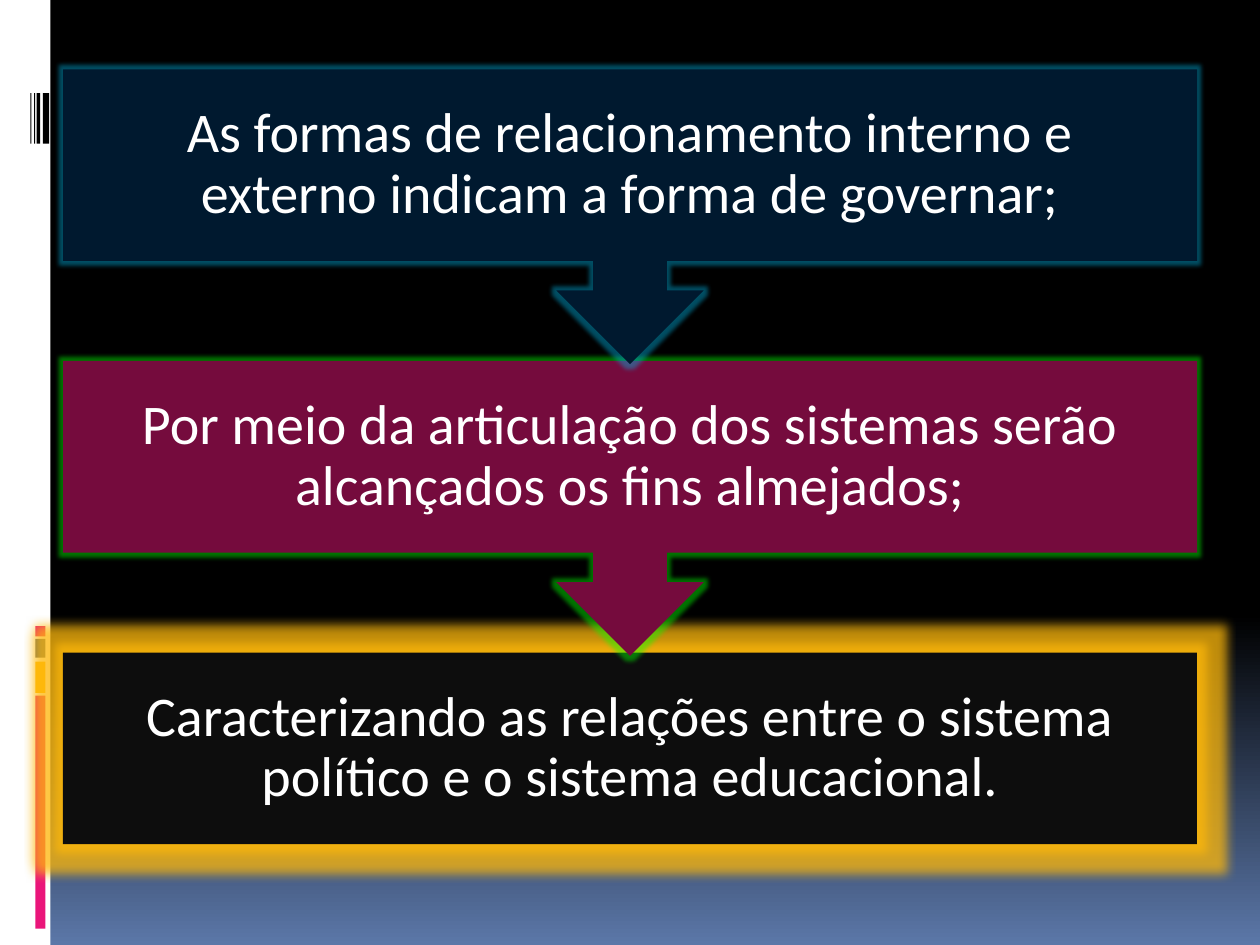
import pptx
import pptx.util
import pptx.dml.color
import pptx.enum.shapes
import pptx.enum.text
import pptx.oxml
import pptx.oxml.ns

Inches = pptx.util.Inches
RGBColor = pptx.dml.color.RGBColor
MSO_SHAPE = pptx.enum.shapes.MSO_SHAPE

BLACK = RGBColor(0x00, 0x00, 0x00)
WHITE = RGBColor(0xFF, 0xFF, 0xFF)
PINK = RGBColor(0xEA, 0x15, 0x7A)
AMBER = RGBColor(0xFE, 0xB8, 0x0A)
SLATE = RGBColor(0x4E, 0x5B, 0x6F)
SKY = RGBColor(0x5B, 0x77, 0xA8)
NAVY = RGBColor(0x00, 0x19, 0x2F)
WINE = RGBColor(0x75, 0x0B, 0x3D)
CHARCOAL = RGBColor(0x0D, 0x0D, 0x0D)
CYAN = RGBColor(0x00, 0xAD, 0xDC)
GREEN = RGBColor(0x00, 0xFF, 0x00)

presentation = pptx.Presentation()
presentation.slide_width = Inches(10)
presentation.slide_height = Inches(7.5)
slide = presentation.slides.add_slide(presentation.slide_layouts[6])

background = slide.background.fill
background.gradient()
background.gradient_angle = 270
for stop, position, color in zip(background.gradient_stops, (0.65, 1), (BLACK, SKY)):
    stop.position = position
    stop.color.rgb = color


def add_block(kind, left, top, width, height, color):
    shape = slide.shapes.add_shape(
        kind, Inches(left), Inches(top), Inches(width), Inches(height))
    shape.shadow.inherit = False
    shape.fill.solid()
    shape.fill.fore_color.rgb = color
    shape.line.fill.background()
    return shape


def add_text(text, *, left, top, width, height, size, color, font="Calibri", inset=0.25):
    frame = slide.shapes.add_textbox(
        Inches(left), Inches(top), Inches(width), Inches(height)).text_frame
    frame.word_wrap = True
    frame.vertical_anchor = pptx.enum.text.MSO_ANCHOR.MIDDLE
    frame.margin_left = frame.margin_right = Inches(inset)
    frame.margin_top = frame.margin_bottom = Inches(inset)
    paragraph = frame.paragraphs[0]
    paragraph.text = text
    paragraph.alignment = pptx.enum.text.PP_ALIGN.CENTER
    paragraph.line_spacing = 0.9
    paragraph.font.name = font
    paragraph.font.size = pptx.util.Pt(size)
    paragraph.font.color.rgb = color


# Side band with its coloured segments and barcode
add_block(MSO_SHAPE.RECTANGLE, 0, 0, 0.4, 7.5, WHITE)
for top, height, color in [
    (5.52, 1.85, PINK), (5.25, 0.25, AMBER), (5.07, 0.15, SLATE), (4.97, 0.08, PINK),
]:
    add_block(MSO_SHAPE.RECTANGLE, 0.28, top, 0.08, height, color)
for left, width in [(0.34, 0.05), (0.29, 0.03), (0.27, 0.01), (0.24, 0.01)]:
    add_block(MSO_SHAPE.RECTANGLE, left, 0.74, width, 0.4, BLACK)

# Steps, stacked from the bottom so that each arrow overlaps the next box
LEFT, WIDTH, BOX_HEIGHT, CALLOUT_HEIGHT = 0.5, 9, 1.52, 2.34
FIRST_TOP, STEP = 0.55, 2.315
steps = [
    ("As formas de relacionamento interno e externo indicam a forma de governar;",
     NAVY, CYAN, 5, 45),
    ("Por meio da articulação dos sistemas serão alcançados os fins almejados;",
     WINE, GREEN, 5, 45),
    ("Caracterizando as relações entre o sistema político e o sistema educacional.",
     CHARCOAL, AMBER, 11, 75),
]
for index in reversed(range(len(steps))):
    text, color, glow_color, glow_points, glow_opacity = steps[index]
    top = FIRST_TOP + index * STEP
    if index == len(steps) - 1:
        shape = add_block(MSO_SHAPE.RECTANGLE, LEFT, top, WIDTH, BOX_HEIGHT, color)
    else:
        shape = add_block(
            MSO_SHAPE.UP_ARROW_CALLOUT, LEFT, top, WIDTH, CALLOUT_HEIGHT, color)
        shape.rotation = 180
    effects = shape._element.spPr.find(pptx.oxml.ns.qn("a:effectLst"))
    effects.append(pptx.oxml.parse_xml(
        f'<a:glow {pptx.oxml.ns.nsdecls("a")} rad="{pptx.util.Pt(glow_points)}">'
        f'<a:srgbClr val="{glow_color}"><a:alpha val="{glow_opacity * 1000}"/></a:srgbClr>'
        '</a:glow>'))
    add_text(text, left=LEFT, top=top, width=WIDTH, height=BOX_HEIGHT, size=32, color=WHITE)

presentation.save("out.pptx")
